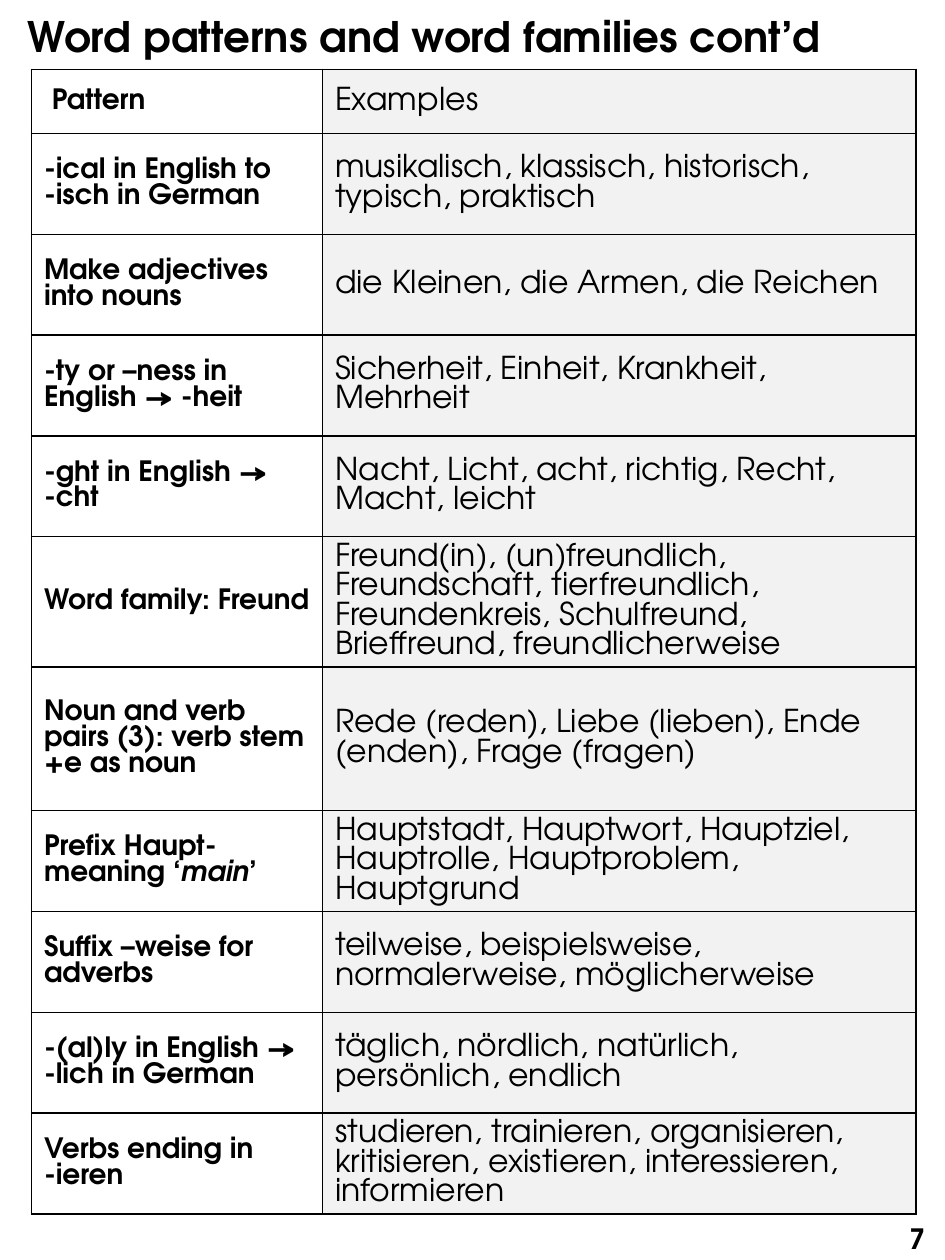
from typing import NamedTuple

from lxml.etree import SubElement
from pptx import Presentation
from pptx.dml.color import RGBColor
from pptx.enum.text import MSO_ANCHOR as Anchor, MSO_AUTO_SIZE as AutoSize, PP_ALIGN as Align
from pptx.oxml.ns import qn
from pptx.util import Inches, Pt

FONT = "TeX Gyre Adventor"
BLACK = "000000"
PALE_GREY = "F2F2F2"


class PatternRow(NamedTuple):
    pattern: str
    examples: str
    height: float = 0.8


ROWS = [
    PatternRow(" Pattern", "Examples", 0.51),
    PatternRow("-ical in English to -isch in German", "musikalisch, klassisch, historisch, typisch, praktisch"),
    PatternRow("Make adjectives into nouns", "die Kleinen, die Armen, die Reichen"),
    PatternRow("-ty or –ness in English → -heit", "Sicherheit, Einheit, Krankheit, Mehrheit"),
    PatternRow("-ght in English → -cht", "Nacht, Licht, acht, richtig, Recht, Macht, leicht"),
    PatternRow(
        "Word family: Freund",
        "Freund(in), (un)freundlich, Freundschaft, tierfreundlich, Freundenkreis, "
        "Schulfreund, Brieffreund, freundlicherweise",
        0.98,
    ),
    PatternRow(
        "Noun and verb pairs (3): verb stem +e as noun",
        "Rede (reden), Liebe (lieben), Ende (enden), Frage (fragen)",
        1.14,
    ),
    PatternRow(
        "Prefix Haupt-meaning ‘*main*’",
        "Hauptstadt, Hauptwort, Hauptziel, Hauptrolle, Hauptproblem, Hauptgrund",
    ),
    PatternRow("Suffix –weise for adverbs", "teilweise, beispielsweise, normalerweise, möglicherweise"),
    PatternRow("-(al)ly in English → -lich in German", "täglich, nördlich, natürlich, persönlich, endlich"),
    PatternRow(
        "Verbs ending in -ieren",
        "studieren, trainieren, organisieren, kritisieren, existieren, interessieren, informieren",
    ),
]


def color(value: str) -> RGBColor:
    return RGBColor.from_string(value)


def write(para, text: str, size: float, bold: bool) -> None:
    for index, part in enumerate(text.split("*")):
        span = para.add_run()
        span.text = part
        if index % 2:
            span.font.italic = True
    font = para.font
    font.name, font.size, font.bold = FONT, Pt(size), bold
    font.color.rgb = color(BLACK)


def set_frame(frame) -> None:
    frame.word_wrap = True
    frame.auto_size = AutoSize.NONE
    frame.vertical_anchor = Anchor.MIDDLE


def add_borders(cell) -> None:
    properties = cell._tc.get_or_add_tcPr()
    for position, side in enumerate(("a:lnL", "a:lnR", "a:lnT", "a:lnB")):
        line = SubElement(properties, qn(side), w=str(Pt(1)))
        fill = SubElement(line, qn("a:solidFill"))
        SubElement(fill, qn("a:srgbClr"), val=BLACK)
        properties.remove(line)
        properties.insert(position, line)


def fill_cell(cell, text: str, size: float, bold: bool, shade: str | None) -> None:
    write(cell.text_frame.paragraphs[0], text, size, bold)
    cell.vertical_anchor = Anchor.MIDDLE
    if shade:
        cell.fill.solid()
        cell.fill.fore_color.rgb = color(shade)
    else:
        cell.fill.background()
    add_borders(cell)


def add_title(page, text: str) -> None:
    title = page.shapes.title
    title.left, title.top = Inches(0.12), Inches(0.16)
    title.width, title.height = Inches(7.15), Inches(0.3)
    set_frame(title.text_frame)
    para = title.text_frame.paragraphs[0]
    para.alignment = Align.LEFT
    para.line_spacing = 0.9
    write(para, text, 24, True)


def add_page_number(page, number: str) -> None:
    box = page.shapes.add_textbox(Inches(5.69), Inches(9.48), Inches(1.75), Inches(0.69))
    set_frame(box.text_frame)
    para = box.text_frame.paragraphs[0]
    para.alignment = Align.RIGHT
    write(para, number, 16, True)


def add_pattern_table(page, rows: list[PatternRow]) -> None:
    height = sum(row.height for row in rows)
    table = page.shapes.add_table(
        len(rows), 2, Inches(0.25), Inches(0.55), Inches(7.02), Inches(height)
    ).table
    table.first_row = table.horz_banding = False
    for column, width in zip(table.columns, (2.31, 4.71)):
        column.width = Inches(width)
    for index, row in enumerate(rows):
        table.rows[index].height = Inches(row.height)
        fill_cell(table.cell(index, 0), row.pattern, 16, True, None)
        fill_cell(table.cell(index, 1), row.examples, 18, False, PALE_GREY)


def main() -> None:
    deck = Presentation()
    deck.slide_width, deck.slide_height = Inches(7.5), Inches(10)
    page = deck.slides.add_slide(deck.slide_layouts[5])
    add_title(page, "Word patterns and word families cont’d")
    add_page_number(page, "7")
    add_pattern_table(page, ROWS)
    deck.save("out.pptx")


if __name__ == "__main__":
    main()
